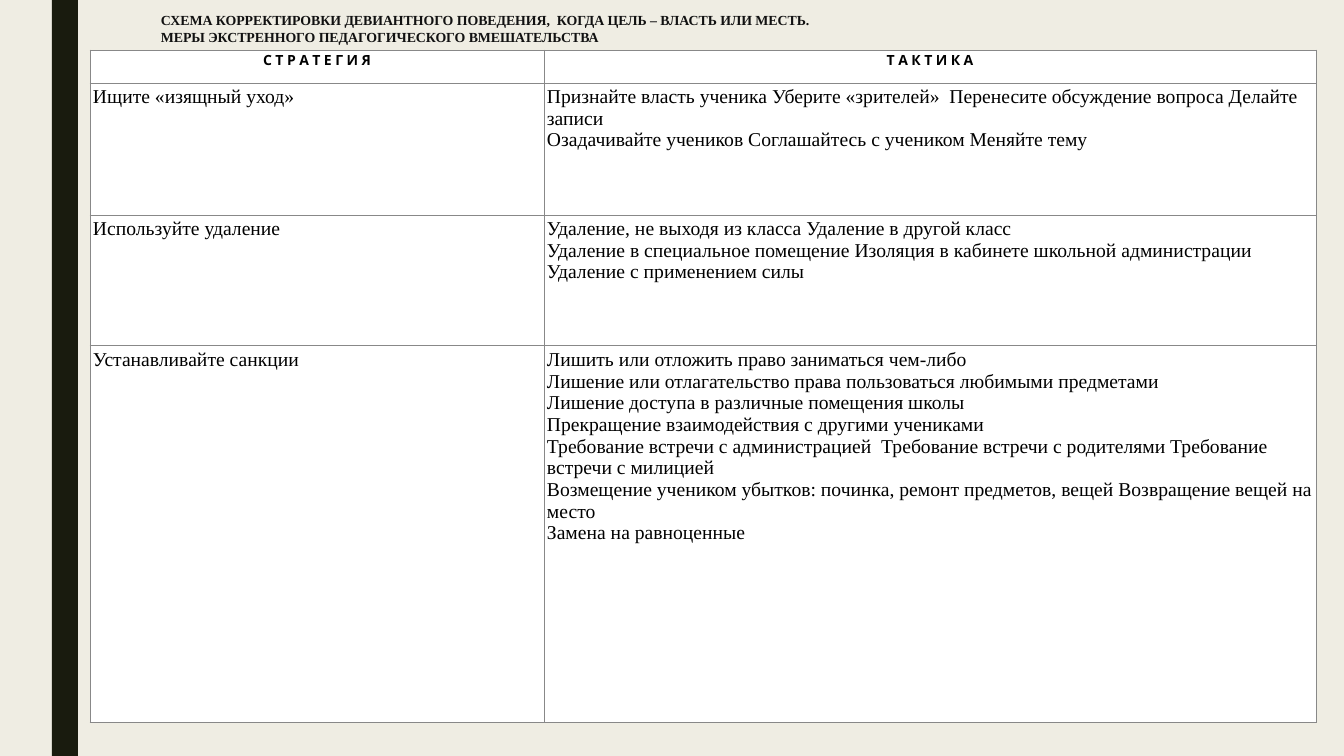
"""Build a slide with a table of strategies and tactics for correcting behaviour."""
from lxml import etree
from pptx import Presentation
from pptx.dml.color import RGBColor
from pptx.enum.shapes import MSO_SHAPE
from pptx.enum.text import MSO_ANCHOR, PP_ALIGN
from pptx.oxml.ns import qn
from pptx.util import Pt

RECTANGLE = MSO_SHAPE.RECTANGLE
TOP = MSO_ANCHOR.TOP
LEFT, CENTER = PP_ALIGN.LEFT, PP_ALIGN.CENTER

TITLE = [
    "СХЕМА КОРРЕКТИРОВКИ ДЕВИАНТНОГО ПОВЕДЕНИЯ,  КОГДА ЦЕЛЬ – ВЛАСТЬ ИЛИ МЕСТЬ.",
    "МЕРЫ ЭКСТРЕННОГО ПЕДАГОГИЧЕСКОГО ВМЕШАТЕЛЬСТВА",
]
ROWS = [
    (["С Т Р А Т Е Г И Я"], ["Т А К Т И К А"]),
    (["Ищите «изящный уход»"], [
        "Признайте власть ученика Уберите «зрителей»  Перенесите обсуждение вопроса Делайте записи",
        "Озадачивайте учеников Соглашайтесь с учеником Меняйте тему",
    ]),
    (["Используйте удаление"], [
        "Удаление, не выходя из класса Удаление в другой класс",
        "Удаление в специальное помещение Изоляция в кабинете школьной администрации",
        "Удаление с применением силы",
    ]),
    (["Устанавливайте санкции"], [
        "Лишить или отложить право заниматься чем-либо",
        "Лишение или отлагательство права пользоваться любимыми предметами",
        "Лишение доступа в различные помещения школы",
        "Прекращение взаимодействия с другими учениками",
        "Требование встречи с администрацией  Требование встречи с родителями Требование встречи с милицией",
        "Возмещение учеником убытков: починка, ремонт предметов, вещей Возвращение вещей на место",
        "Замена на равноценные",
    ]),
]
PAGE_SIZE = (1344, 756)
BAR_BOX = (52, 0, 26, 756)
TITLE_BOX = (151, 7, 1058, 53)
TABLE_ORIGIN = (90, 50)
COLUMN_WIDTHS = [454, 772]
ROW_HEIGHTS = [33, 132, 131, 377]
CELL_INSET = 3
BORDER_POINTS = 0.75
TITLE_STYLE = ("Times New Roman", 9.9, True, "111111")
HEAD_STYLE = ("Karla", 10, True, "000000")
BODY_STYLE = ("Times New Roman", 14, False, "000000")
PAPER, BAR, CELL, BORDER = "EFEDE3", "191B0E", "FFFFFF", "888888"


def px(length):
    return round(length * 914400 / 100.8)


def paint(fill, color):
    fill.solid()
    fill.fore_color.rgb = RGBColor.from_string(color)


def add_span(para, text, style):
    name, size, bold, color = style
    span = para.add_run()
    span.text = text
    span.font.name, span.font.size, span.font.bold = name, Pt(size), bold
    span.font.color.rgb = RGBColor.from_string(color)


def add_borders(cell):
    properties = cell._tc.get_or_add_tcPr()
    for position, side in enumerate(("a:lnL", "a:lnR", "a:lnT", "a:lnB")):
        line = etree.Element(qn(side), w=str(Pt(BORDER_POINTS)))
        solid = etree.SubElement(line, qn("a:solidFill"))
        etree.SubElement(solid, qn("a:srgbClr"), val=BORDER)
        properties.insert(position, line)


def fill_cell(cell, lines, style, align):
    paint(cell.fill, CELL)
    add_borders(cell)
    cell.margin_left = cell.margin_right = px(CELL_INSET)
    cell.margin_top = cell.margin_bottom = px(CELL_INSET)
    cell.vertical_anchor = TOP
    frame = cell.text_frame
    for index, line in enumerate(lines):
        para = frame.add_paragraph() if index else frame.paragraphs[0]
        para.alignment = align
        add_span(para, line, style)


def add_title(page):
    frame = page.shapes.add_textbox(*map(px, TITLE_BOX)).text_frame
    frame.word_wrap = True
    frame.vertical_anchor = TOP
    para = frame.paragraphs[0]
    for index, line in enumerate(TITLE):
        if index:
            para.add_line_break()
        add_span(para, line, TITLE_STYLE)


def add_strategy_table(page):
    size = (sum(COLUMN_WIDTHS), sum(ROW_HEIGHTS))
    table = page.shapes.add_table(
        len(ROWS), len(COLUMN_WIDTHS), *map(px, TABLE_ORIGIN + size)).table
    table.horz_banding = False
    for column, width in zip(table.columns, COLUMN_WIDTHS):
        column.width = px(width)
    for index, (row, height, texts) in enumerate(zip(table.rows, ROW_HEIGHTS, ROWS)):
        row.height = px(height)
        style, align = (BODY_STYLE, LEFT) if index else (HEAD_STYLE, CENTER)
        for cell, lines in zip(row.cells, texts):
            fill_cell(cell, lines, style, align)


def main():
    deck = Presentation()
    deck.slide_width, deck.slide_height = map(px, PAGE_SIZE)
    page = deck.slides.add_slide(deck.slide_layouts[6])
    paint(page.background.fill, PAPER)
    bar = page.shapes.add_shape(RECTANGLE, *map(px, BAR_BOX))
    bar.shadow.inherit = False
    paint(bar.fill, BAR)
    bar.line.fill.background()
    add_title(page)
    add_strategy_table(page)
    deck.save("out.pptx")


if __name__ == "__main__":
    main()
